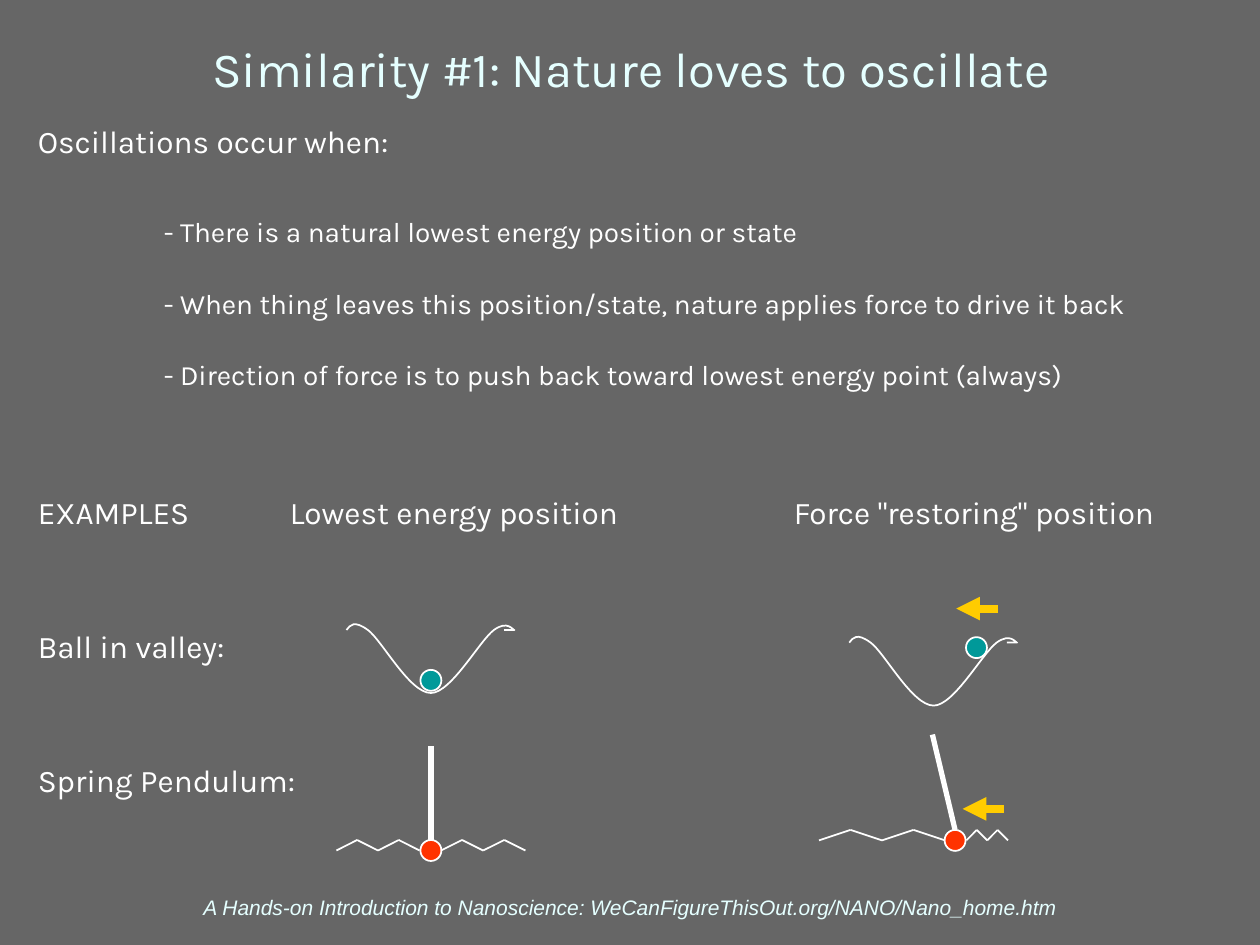
from dataclasses import dataclass
from itertools import pairwise

from lxml import etree
from pptx import Presentation
from pptx.dml.color import RGBColor
from pptx.enum import shapes as sh, text as tx
from pptx.oxml import ns
from pptx.util import Inches, Pt


@dataclass(frozen=True)
class Theme:
    back: str = "666666"
    pale: str = "E5FFFF"
    white: str = "FFFFFF"
    teal: str = "009999"
    red: str = "FF3300"
    gold: str = "FFCC00"
    face: str = "Karla"
    plain: str = "Arial"
    title: float = 28
    head: float = 18
    item: float = 16
    foot: float = 12
    thin: float = 1
    rod: float = 3
    push: float = 4.5


@dataclass(frozen=True)
class Row:
    words: str
    size: float
    gap: float = 0
    inset: float = 0


@dataclass(frozen=True)
class Spring:
    start: float
    end: float
    base: float


@dataclass(frozen=True)
class Swing:
    bob: tuple[float, float]
    top: tuple[float, float]
    springs: tuple[Spring, Spring]


@dataclass(frozen=True)
class Dale:
    shift: tuple[float, float]
    ball: tuple[float, float]


THEME = Theme()
SIZE = 1 / 6
STEPS = 4
TAB = 2
ROWS = (
    Row("Oscillations occur when:", THEME.head),
    Row("- There is a natural lowest energy position or state", THEME.item, 31, 1),
    Row("- When thing leaves this position/state, nature applies force to drive it back",
        THEME.item, 22, 1),
    Row("- Direction of force is to push back toward lowest energy point (always)",
        THEME.item, 21.6, 1),
    Row('EXAMPLES\tLowest energy position\tForce "restoring" position', THEME.head, 58),
    Row("Ball in valley:", THEME.head, 55),
    Row("Spring Pendulum:", THEME.head, 55.3),
)
CURVE = (
    (2.75, 5), (2.78, 4.96), (2.81, 4.92), (2.92, 5),
    (3.03, 5.08), (3.25, 5.5), (3.42, 5.5),
    (3.58, 5.5), (3.81, 5.08), (3.92, 5),
    (4.03, 4.92), (4.07, 5), (4.08, 5),
    (4.1, 5), (4.05, 5), (4, 5),
)
DALES = (
    Dale((0, 0), (3.42, 5.4)),
    Dale((3.99, 0.1), (7.75, 5.14)),
)
SWINGS = (
    Swing((3.42, 6.75), (3.42, 5.92),
          (Spring(2.67, 3.33, 6.75), Spring(3.5, 4.17, 6.75))),
    Swing((7.58, 6.67), (7.4, 5.83),
          (Spring(6.5, 7.5, 6.67), Spring(7.67, 8, 6.67))),
)
PUSHES = ((7.92, 4.83), (7.97, 6.42))


def tint(name: str) -> RGBColor:
    return RGBColor.from_string(name)


def add_box(slide, left: float, top: float, wide: float, high: float, anchor):
    frame = slide.shapes.add_textbox(
        Inches(left), Inches(top), Inches(wide), Inches(high)).text_frame
    frame.word_wrap = True
    frame.vertical_anchor = anchor
    frame.margin_left = frame.margin_right = Inches(0.05)
    frame.margin_top = frame.margin_bottom = Inches(0.05)
    return frame


def style(para, size: float, color: str, face: str, slant: bool = False) -> None:
    for run in para.runs:
        run.font.size = Pt(size)
        run.font.name = face
        run.font.italic = slant
        run.font.color.rgb = tint(color)


def add_line(slide, start, end, width: float, color: str = THEME.white,
             arrow: bool = False):
    line = slide.shapes.add_connector(
        sh.MSO_CONNECTOR.STRAIGHT, *(Inches(v) for v in (*start, *end)))
    line.line.color.rgb = tint(color)
    line.line.width = Pt(width)
    if arrow:
        etree.SubElement(line.line._get_or_add_ln(), ns.qn("a:tailEnd"), type="triangle")
    etree.SubElement(line._element.spPr, ns.qn("a:effectLst"))
    return line


def add_ball(slide, mid: tuple[float, float], color: str):
    ball = slide.shapes.add_shape(
        sh.MSO_SHAPE.OVAL, Inches(mid[0] - SIZE / 2), Inches(mid[1] - SIZE / 2),
        Inches(SIZE), Inches(SIZE))
    ball.shadow.inherit = False
    ball.fill.solid()
    ball.fill.fore_color.rgb = tint(color)
    ball.line.color.rgb = tint(THEME.white)
    ball.line.width = Pt(THEME.thin)
    return ball


def bend(shape) -> None:
    legs = list(shape._element.iter(ns.qn("a:lnTo")))
    for i in range(0, len(legs), 3):
        first, *rest = legs[i:i + 3]
        arc = etree.Element(ns.qn("a:cubicBezTo"))
        first.addprevious(arc)
        for leg in (first, *rest):
            arc.append(leg[0])
            leg.getparent().remove(leg)


def add_dale(slide, dale: Dale) -> None:
    dx, dy = dale.shift
    dots = [(Inches(x + dx), Inches(y + dy)) for x, y in CURVE]
    pen = slide.shapes.build_freeform(*dots[0])
    pen.add_line_segments(dots[1:], close=False)
    curve = pen.convert_to_shape()
    bend(curve)
    curve.shadow.inherit = False
    curve.fill.background()
    curve.line.color.rgb = tint(THEME.white)
    curve.line.width = Pt(THEME.thin)
    add_ball(slide, dale.ball, THEME.teal)


def add_spring(slide, spring: Spring) -> None:
    step = (spring.end - spring.start) / STEPS
    dots = [(spring.start + i * step, spring.base - i % 2 * SIZE / 2)
            for i in range(STEPS + 1)]
    for start, end in pairwise(dots):
        add_line(slide, start, end, THEME.thin)


def add_swing(slide, swing: Swing) -> None:
    bob = add_ball(slide, swing.bob, THEME.red)
    rod = add_line(slide, swing.bob, swing.top, THEME.rod)
    rod.begin_connect(bob, 0)
    for spring in swing.springs:
        add_spring(slide, spring)


def add_rows(slide) -> None:
    frame = add_box(slide, 0.25, 0.92, 9.33, 5.83, tx.MSO_ANCHOR.TOP)
    for i, row in enumerate(ROWS):
        para = frame.add_paragraph() if i else frame.paragraphs[0]
        para.text = row.words
        props = para._p.get_or_add_pPr()
        props.set("marL", str(Inches(row.inset)))
        props.set("indent", "0")
        props.set("defTabSz", str(Inches(TAB)))
        para.space_before = Pt(row.gap)
        style(para, row.size, THEME.white, THEME.face)


def main() -> None:
    deck = Presentation()
    deck.slide_width, deck.slide_height = Inches(10), Inches(7.5)
    slide = deck.slides.add_slide(deck.slide_layouts[6])
    slide.background.fill.solid()
    slide.background.fill.fore_color.rgb = tint(THEME.back)

    foot = add_box(slide, 0.34, 7.06, 9.33, 0.29, tx.MSO_ANCHOR.BOTTOM)
    foot.text = ("A Hands-on Introduction to Nanoscience: "
                 "WeCanFigureThisOut.org/NANO/Nano_home.htm")
    style(foot.paragraphs[0], THEME.foot, THEME.pale, THEME.plain, True)
    title = add_box(slide, 0.34, 0.08, 9.33, 0.92, tx.MSO_ANCHOR.MIDDLE)
    title.text = "Similarity #1: Nature loves to oscillate"
    style(title.paragraphs[0], THEME.title, THEME.pale, THEME.face)
    for frame in (foot, title):
        frame.paragraphs[0].alignment = tx.PP_ALIGN.CENTER
    add_rows(slide)

    for dale in DALES:
        add_dale(slide, dale)
    for swing in SWINGS:
        add_swing(slide, swing)
    for x, y in PUSHES:
        add_line(slide, (x, y), (x - 0.33, y), THEME.push, THEME.gold, True)
    deck.save("out.pptx")


if __name__ == "__main__":
    main()
